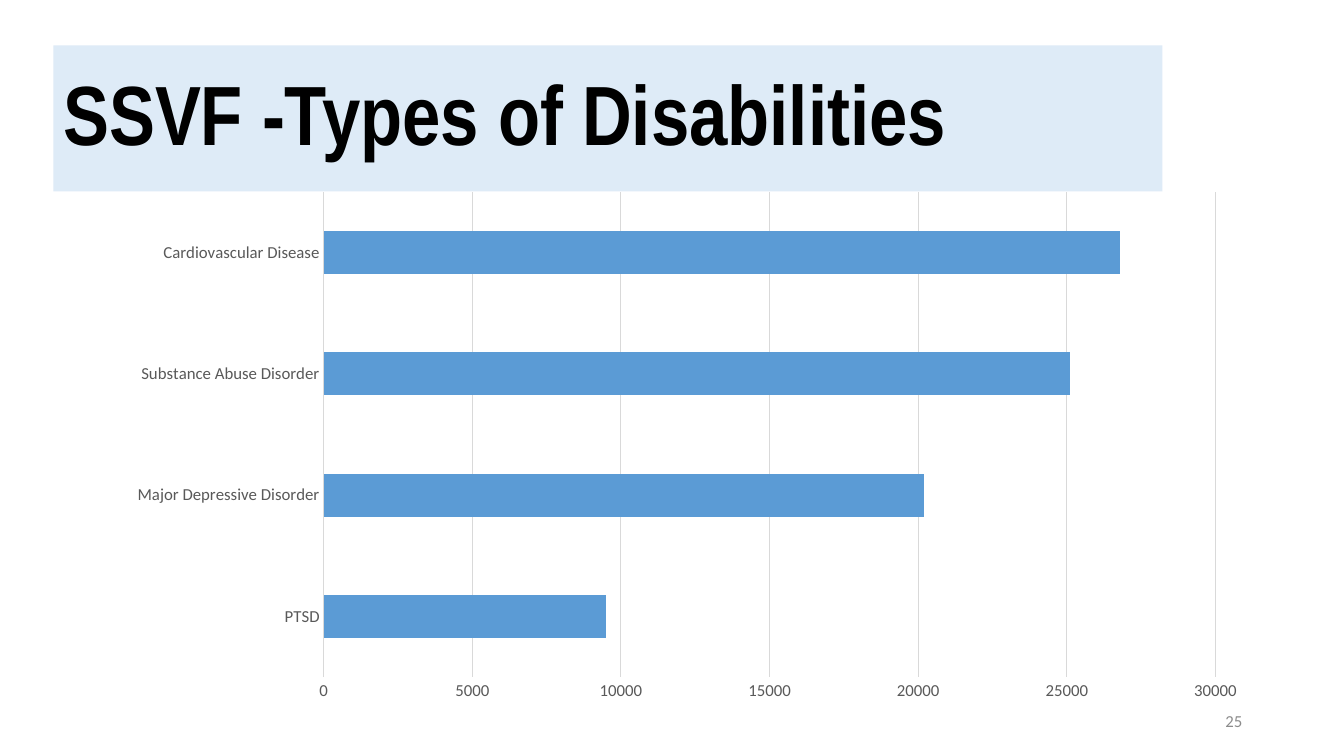
from pptx import Presentation
from pptx.chart.data import CategoryChartData
from pptx.dml.color import RGBColor
from pptx.enum.chart import XL_CHART_TYPE as ChartType, XL_TICK_MARK as TickMark
from pptx.enum.shapes import MSO_SHAPE as Preset
from pptx.enum.text import MSO_ANCHOR as Anchor, PP_ALIGN as Align
from pptx.oxml import parse_xml
from pptx.oxml.ns import nsdecls
from pptx.util import Emu, Pt

HEADING = "SSVF -Types of Disabilities"
PAGE = "25"
DISABILITIES = {
    "PTSD": 9500,
    "Major Depressive Disorder": 20200,
    "Substance Abuse Disorder": 25100,
    "Cardiovascular Disease": 26800,
}
SCALE_MAX, SCALE_STEP = 30000, 5000

THEME = {
    "heading_font": "Arial Narrow", "body_font": "Calibri",
    "heading_size": 60, "label_size": 12,
    "heading": "000000", "banner": "DEEBF7", "page": "8C8C8C",
    "label": "595959", "grid": "D9D9D9", "bar": "5B9BD5",
}

EMU_PER_PX = 9144
SLIDE_SIZE = (1333, 750)
BANNER_BOX = (53, 45, 1100, 145)
CHART_BOX = (40, 190, 1227, 545)
PAGE_BOX = (942, 695, 300, 40)
PLOT_BOX = (281, 0, 885, 482)


def px(*lengths):
    return [Emu(length * EMU_PER_PX) for length in lengths]


def color(part):
    return RGBColor.from_string(THEME[part])


def style(font, part, size, face, bold=False):
    font.name, font.size, font.bold = THEME[face], Pt(THEME[size]), bold
    font.color.rgb = color(part)


def write(holder, words, align, *look):
    frame = holder.text_frame
    frame.word_wrap = True
    frame.vertical_anchor = Anchor.MIDDLE
    frame.text = words
    line = frame.paragraphs[0]
    line.alignment = align
    style(line.runs[0].font, *look)
    return line


def rule(line):
    line.color.rgb = color("grid")
    line.width = Pt(0.75)


def add_disabilities(slide):
    counts = CategoryChartData()
    counts.categories = list(DISABILITIES)
    counts.add_series("Series 1", list(DISABILITIES.values()))
    chart = slide.shapes.add_chart(ChartType.BAR_CLUSTERED, *px(*CHART_BOX), counts).chart
    chart.has_legend = chart.has_title = False

    for axis in (chart.category_axis, chart.value_axis):
        axis.major_tick_mark = axis.minor_tick_mark = TickMark.NONE
        style(axis.tick_labels.font, "label", "label_size", "body_font")
    chart.category_axis.has_major_gridlines = False
    rule(chart.category_axis.format.line)
    scale = chart.value_axis
    scale.minimum_scale, scale.maximum_scale, scale.major_unit = 0, SCALE_MAX, SCALE_STEP
    scale.tick_labels.number_format = "General"
    scale.tick_labels.number_format_is_linked = False
    scale.format.line.fill.background()
    scale.has_major_gridlines = True
    rule(scale.major_gridlines.format.line)

    bars = chart.plots[0]
    bars.gap_width = 182
    bars.vary_by_categories = False
    fill = bars.series[0].format.fill
    fill.solid()
    fill.fore_color.rgb = color("bar")
    place_plot(chart)


def place_plot(chart):
    width, height = CHART_BOX[2:]
    modes = '<c:layoutTarget val="inner"/><c:xMode val="edge"/><c:yMode val="edge"/>'
    places = "".join(
        f'<c:{side} val="{length / whole:.3f}"/>'
        for side, length, whole in zip("xywh", PLOT_BOX, (width, height) * 2)
    )
    layout = parse_xml(
        f'<c:layout {nsdecls("c")}><c:manualLayout>{modes}{places}</c:manualLayout></c:layout>'
    )
    area = chart.plots[0]._element.getparent()
    for default in area.xpath("c:layout"):
        area.remove(default)
    area.insert(0, layout)


def main():
    deck = Presentation()
    deck.slide_width, deck.slide_height = px(*SLIDE_SIZE)
    slide = deck.slides.add_slide(deck.slide_layouts[6])

    page = slide.shapes.add_textbox(*px(*PAGE_BOX))
    write(page, PAGE, Align.RIGHT, "page", "label_size", "body_font")

    banner = slide.shapes.add_shape(Preset.RECTANGLE, *px(*BANNER_BOX))
    banner.shadow.inherit = False
    banner.fill.solid()
    banner.fill.fore_color.rgb = color("banner")
    banner.line.fill.background()
    heading = write(banner, HEADING, Align.LEFT, "heading", "heading_size", "heading_font", True)
    heading.line_spacing = 0.9

    add_disabilities(slide)
    deck.save("out.pptx")


if __name__ == "__main__":
    main()
